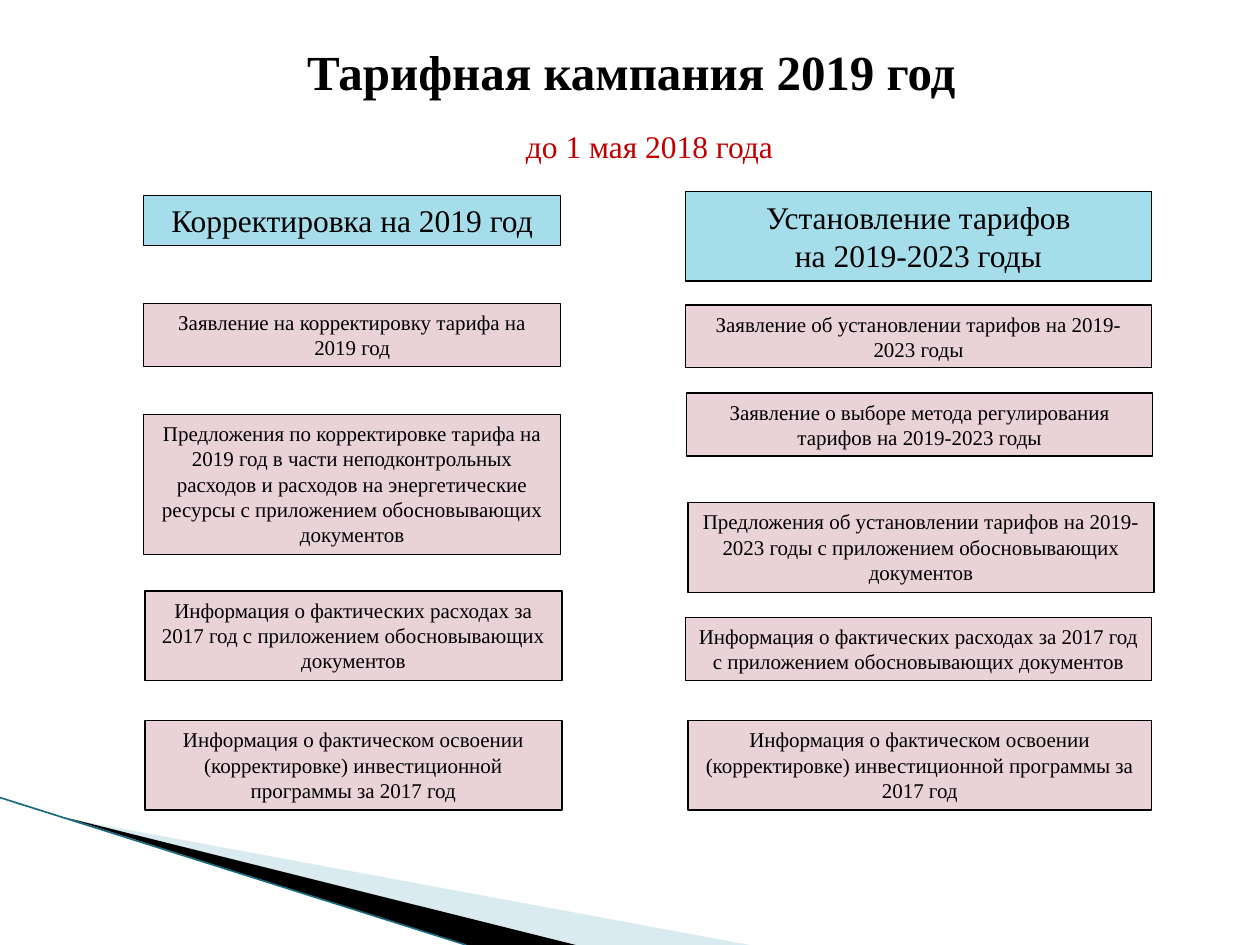
from dataclasses import dataclass

from lxml.etree import SubElement
from pptx import Presentation
from pptx.dml.color import RGBColor
from pptx.enum.shapes import MSO_CONNECTOR, MSO_SHAPE
from pptx.enum.text import MSO_ANCHOR, MSO_AUTO_SIZE, PP_ALIGN
from pptx.oxml.ns import qn
from pptx.util import Inches, Pt


@dataclass(frozen=True)
class Theme:
    font: str = "Times New Roman"
    ink: str = "000000"
    deadline: str = "C00000"
    header_fill: str = "A6DDEA"
    item_fill: str = "EAD3D8"
    wedge: str = "A0CBDC"
    edge: str = "1B6B80"
    title_size: int = 28
    header_size: int = 18
    item_size: int = 12


theme = Theme()


def write(frame, lines, size, color=theme.ink, bold=False,
          anchor=MSO_ANCHOR.TOP, auto_size=MSO_AUTO_SIZE.SHAPE_TO_FIT_TEXT):
    """Fill a text frame with centred paragraphs, one for each line."""
    frame_format = {"word_wrap": True, "auto_size": auto_size, "vertical_anchor": anchor}
    for name, value in frame_format.items():
        setattr(frame, name, value)
    font_format = {"name": theme.font, "size": Pt(size), "bold": bold}
    for index, line in enumerate(lines):
        para = frame.add_paragraph() if index else frame.paragraphs[0]
        para.alignment = PP_ALIGN.CENTER
        span = para.add_run()
        span.text = line
        for name, value in font_format.items():
            setattr(span.font, name, value)
        span.font.color.rgb = RGBColor.from_string(color)


deck = Presentation()
deck.slide_width, deck.slide_height = Inches(10), Inches(7.5)
page = deck.slides.add_slide(deck.slide_layouts[5])

# Corner decoration: two wedges and the line along their lower edge
wedges = [
    ([(0.55, 6.5), (5.95, 7.5), (4.56, 7.5)], theme.wedge, 40),
    ([(0.53, 6.49), (4.57, 7.5), (3.7, 7.5)], theme.ink, 100),
]
for points, color, opacity in wedges:
    start, *others = [(Inches(x), Inches(y)) for x, y in points]
    builder = page.shapes.build_freeform(*start)
    builder.add_line_segments(others, close=True)
    wedge = builder.convert_to_shape()
    wedge.shadow.inherit = False
    wedge.fill.solid()
    wedge.fill.fore_color.rgb = RGBColor.from_string(color)
    wedge.line.fill.background()
    if opacity < 100:
        color_node = wedge.fill._xPr.find(qn("a:solidFill"))[0]
        SubElement(color_node, qn("a:alpha"), val=str(opacity * 1000))

edge = page.shapes.add_connector(
    MSO_CONNECTOR.STRAIGHT, Inches(0), Inches(6.33), Inches(3.7), Inches(7.5))
edge.line.color.rgb = RGBColor.from_string(theme.edge)
edge.line.width = Pt(0.95)
SubElement(edge._element.spPr, qn("a:effectLst"))

# Title and deadline
title = page.shapes.title
title_place = {"left": 0.51, "top": 0.13, "width": 9, "height": 0.87}
for name, value in title_place.items():
    setattr(title, name, Inches(value))
write(title.text_frame, ["Тарифная кампания 2019 год"], theme.title_size,
      bold=True, anchor=MSO_ANCHOR.MIDDLE, auto_size=MSO_AUTO_SIZE.NONE)

deadline = page.shapes.add_textbox(Inches(3.03), Inches(0.96), Inches(4.25), Inches(0.4))
write(deadline.text_frame, ["до 1 мая 2018 года"], theme.header_size, theme.deadline)

# Two columns: a header (left, top, width, height, lines), then its documents
expenses = "Информация о фактических расходах за 2017 год с приложением обосновывающих документов"
investment = ("Информация о фактическом освоении (корректировке) "
              "инвестиционной программы за 2017 год")
columns = [
    [
        (1.14, 1.55, 3.31, 0.4, ["Корректировка на 2019 год"]),
        (1.14, 2.41, 3.31, 0.5, ["Заявление на корректировку тарифа на 2019 год"]),
        (1.14, 3.29, 3.31, 1.11, [
            "Предложения по корректировке тарифа на 2019 год в части неподконтрольных "
            "расходов и расходов на энергетические ресурсы с приложением "
            "обосновывающих документов"]),
        (1.15, 4.69, 3.31, 0.71, [expenses]),
        (1.15, 5.72, 3.31, 0.71, [investment]),
    ],
    [
        (5.44, 1.52, 3.7, 0.71, ["Установление тарифов", "на 2019-2023 годы"]),
        (5.44, 2.42, 3.7, 0.5, ["Заявление об установлении тарифов на 2019-2023 годы"]),
        (5.45, 3.12, 3.7, 0.5, [
            "Заявление о выборе метода регулирования тарифов на 2019-2023 годы"]),
        (5.46, 3.99, 3.7, 0.71, [
            "Предложения об установлении тарифов на 2019-2023 годы "
            "с приложением обосновывающих документов"]),
        (5.44, 4.9, 3.7, 0.5, [expenses]),
        (5.46, 5.72, 3.68, 0.71, [investment]),
    ],
]
for column in columns:
    for row, (*place, lines) in enumerate(column):
        fill, size = ((theme.item_fill, theme.item_size) if row
                      else (theme.header_fill, theme.header_size))
        box = page.shapes.add_shape(MSO_SHAPE.RECTANGLE, *map(Inches, place))
        box.shadow.inherit = False
        box.fill.solid()
        box.fill.fore_color.rgb = RGBColor.from_string(fill)
        box.line.color.rgb = RGBColor.from_string(theme.ink)
        box.line.width = Pt(0.75)
        write(box.text_frame, lines, size)

deck.save("out.pptx")
